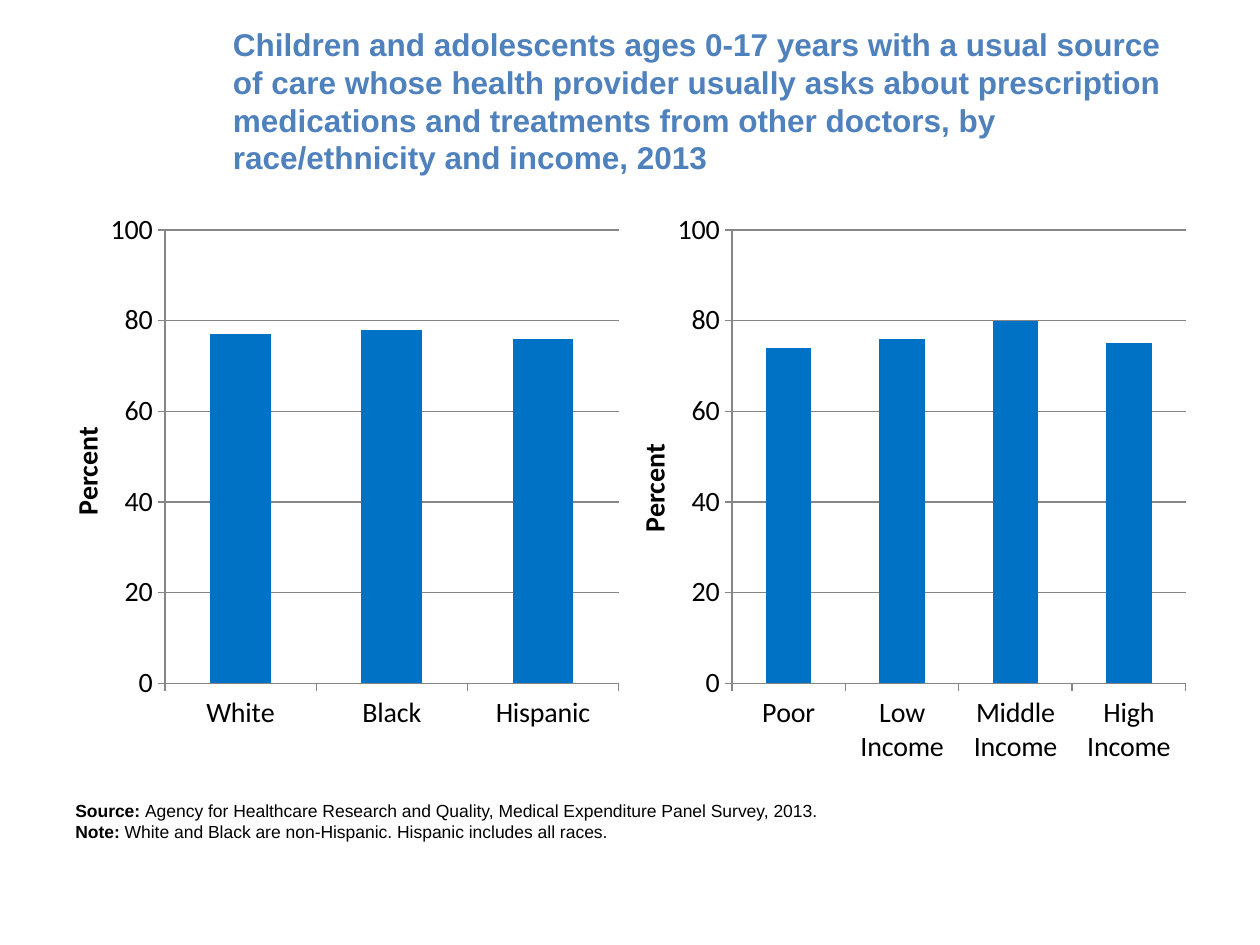
from lxml.etree import SubElement
from pptx import Presentation
from pptx.chart.data import CategoryChartData
from pptx.dml.color import RGBColor
from pptx.enum.chart import XL_CHART_TYPE, XL_TICK_MARK
from pptx.enum.text import MSO_ANCHOR
from pptx.oxml.ns import qn
from pptx.util import Pt

COLOURS = {"title": "4F81BD", "text": "000000", "bar": "0072C6", "line": "868686"}


class SlideBuilder:
    text_font = "Arial"
    axis_font = "Calibri"
    axis_size = 16

    def __init__(self, page):
        self.page = page

    def colour(self, name):
        return RGBColor.from_string(COLOURS[name])

    def style_font(self, font, name, size, colour="text", bold=False):
        font.name = name
        font.size = Pt(size)
        font.bold = bold
        font.color.rgb = self.colour(colour)

    def text(self, left, top, width, height, lines, size, colour="text", anchor=MSO_ANCHOR.TOP):
        box = self.page.shapes.add_textbox(Pt(left), Pt(top), Pt(width), Pt(height))
        frame = box.text_frame
        frame.word_wrap = True
        frame.vertical_anchor = anchor
        for index, spans in enumerate(lines):
            para = frame.add_paragraph() if index else frame.paragraphs[0]
            for words, bold in spans:
                span = para.add_run()
                span.text = words
                self.style_font(span.font, self.text_font, size, colour, bold)

    def style_axis(self, axis):
        axis.major_tick_mark = XL_TICK_MARK.OUTSIDE
        axis.minor_tick_mark = XL_TICK_MARK.NONE
        self.style_line(axis.format.line)
        self.style_font(axis.tick_labels.font, self.axis_font, self.axis_size)

    def style_line(self, line):
        line.color.rgb = self.colour("line")
        line.width = Pt(0.75)

    def place_plot(self, chart, x, y, width, height):
        plot_area = chart.plots[0]._element.getparent()
        for old in plot_area.findall(qn("c:layout")):
            plot_area.remove(old)
        layout = SubElement(plot_area, qn("c:layout"))
        plot_area.insert(0, layout)
        manual = SubElement(layout, qn("c:manualLayout"))
        settings = {"layoutTarget": "inner", "xMode": "edge", "yMode": "edge",
                    "x": x, "y": y, "w": width, "h": height}
        for tag, value in settings.items():
            SubElement(manual, qn(f"c:{tag}")).set("val", str(value))

    def column_chart(self, left, top, width, height, values):
        data = CategoryChartData(number_format="0")
        data.categories = list(values)
        data.add_series("Series 1", list(values.values()))
        chart = self.page.shapes.add_chart(
            XL_CHART_TYPE.COLUMN_CLUSTERED, Pt(left), Pt(top), Pt(width), Pt(height), data
        ).chart
        chart.has_legend = False
        chart.has_title = False
        self.style_font(chart.font, self.text_font, 10)

        plot = chart.plots[0]
        plot.gap_width = 150
        plot.vary_by_categories = False
        fill = plot.series[0].format.fill
        fill.solid()
        fill.fore_color.rgb = self.colour("bar")

        self.style_axis(chart.category_axis)
        axis = chart.value_axis
        self.style_axis(axis)
        axis.minimum_scale = 0
        axis.maximum_scale = 100
        axis.major_unit = 20
        axis.has_major_gridlines = True
        self.style_line(axis.major_gridlines.format.line)
        axis.tick_labels.number_format = "0"
        axis.tick_labels.number_format_is_linked = False
        span = axis.axis_title.text_frame.paragraphs[0].add_run()
        span.text = "Percent"
        self.style_font(span.font, self.axis_font, self.axis_size, bold=True)
        self.place_plot(chart, 0.18, 0.05, 0.8, 0.8)


def main():
    deck = Presentation()
    deck.slide_width = Pt(720)
    deck.slide_height = Pt(540)
    builder = SlideBuilder(deck.slides.add_slide(deck.slide_layouts[6]))

    title = ("Children and adolescents ages 0-17 years with a usual source of care "
             "whose health provider usually asks about prescription medications and "
             "treatments from other doctors, by race/ethnicity and income, 2013")
    builder.text(126, 12.5, 558, 90, [[(title, True)]], 18, "title", MSO_ANCHOR.MIDDLE)

    chart_side = 324
    charts = [
        {"White": 77, "Black": 78, "Hispanic": 76},
        {"Poor": 74, "Low Income": 76, "Middle Income": 80, "High Income": 75},
    ]
    for index, values in enumerate(charts):
        builder.column_chart(36 + index * chart_side, 115.2, chart_side, chart_side, values)

    notes = [
        [("Source: ", True),
         ("Agency for Healthcare Research and Quality, Medical Expenditure Panel Survey, 2013.", False)],
        [("Note: ", True),
         ("White and Black are non-Hispanic. Hispanic includes all races.", False)],
    ]
    builder.text(36, 453.6, 648, 31.5, notes, 10)
    deck.save("out.pptx")


if __name__ == "__main__":
    main()
